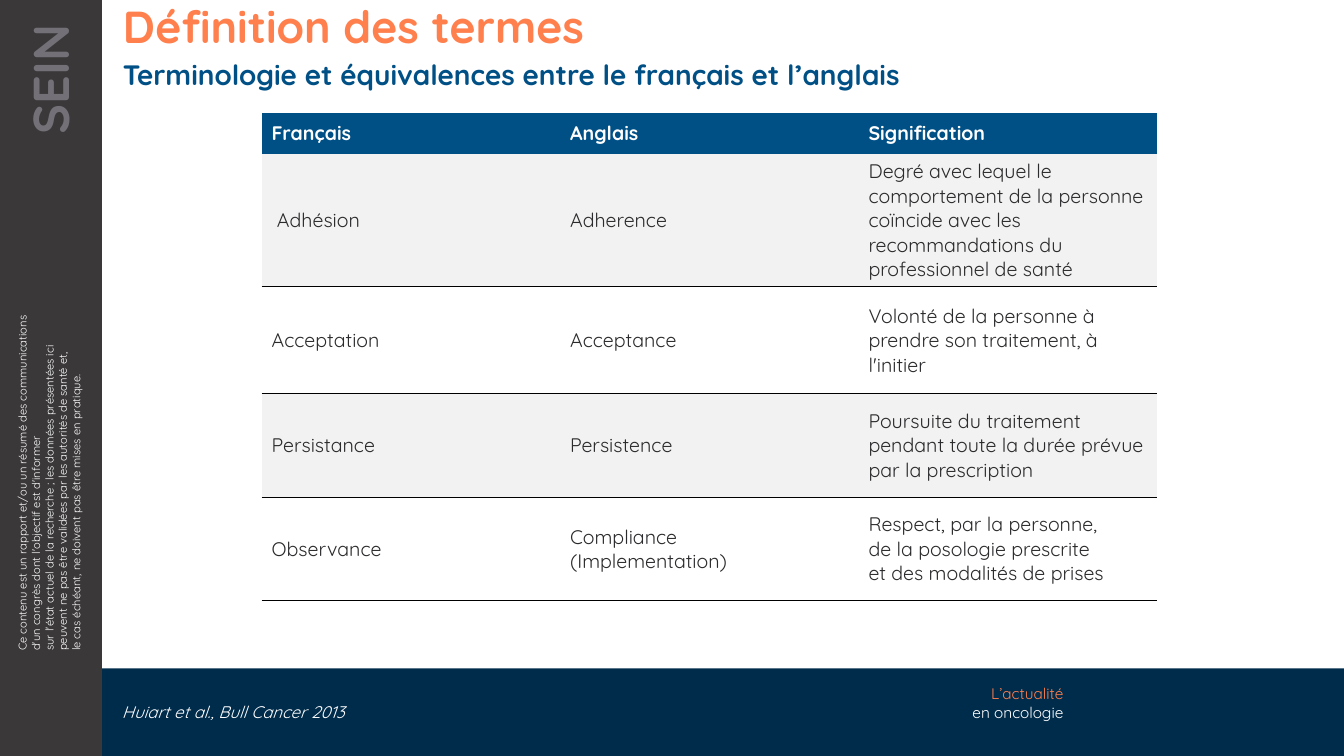
from dataclasses import dataclass

from lxml.etree import SubElement
from pptx import Presentation
from pptx.dml.color import RGBColor
from pptx.enum.shapes import MSO_SHAPE
from pptx.enum.text import MSO_ANCHOR, MSO_AUTO_SIZE, PP_ALIGN
from pptx.oxml.ns import qn
from pptx.util import Pt

# ---- Content
TITLE = "Définition des termes"
SUBTITLE = "Terminologie et équivalences entre le français et l’anglais"
CITATION = "Huiart et al., Bull Cancer 2013"
TOPIC = "SEIN"
DISCLAIMER = (
    "Ce contenu est un rapport et/ou un résumé des communications "
    "d'un congrès dont l'objectif est d'informer ",
    "sur l'état actuel de la recherche ; les données présentées ici peuvent "
    "ne pas être validées par les autorités de santé et, ",
    "le cas échéant, ne doivent pas être mises en pratique.",
)
TAGLINE = ("L’actualité", "en oncologie")
HEADINGS = ("Français", "Anglais", "Signification")
# Each cell is a tuple of paragraphs
TERMS = [
    ((" Adhésion",), ("Adherence",),
     ("Degré avec lequel le comportement de la personne coïncide avec les "
      "recommandations du professionnel de santé",)),
    (("Acceptation",), ("Acceptance",),
     ("Volonté de la personne à prendre son traitement, à l'initier",)),
    (("Persistance",), ("Persistence",),
     ("Poursuite du traitement pendant toute la durée prévue par la "
      "prescription",)),
    (("Observance",), ("Compliance", "(Implementation)"),
     ("Respect, par la personne,", "de la posologie prescrite",
      "et des modalités de prises")),
]


@dataclass(frozen=True)
class Theme:
    font: str = "Quicksand"
    orange: str = "FF7F4D"
    blue: str = "005086"
    navy: str = "002C4C"
    charcoal: str = "3A3839"
    grey: str = "737078"
    ink: str = "2B2A2C"
    band: str = "F2F2F2"
    white: str = "FFFFFF"
    rule: str = "000000"
    title_size: float = 32
    subtitle_size: float = 20
    topic_size: float = 36
    table_size: float = 14
    citation_size: float = 12
    tagline_size: float = 11
    disclaimer_size: float = 8


THEME = Theme()

# ---- Geometry, in points
SLIDE_W, SLIDE_H = 960, 540
SIDEBAR_W = 72.7
FOOTER_TOP = 477.4
TABLE_LEFT, TABLE_TOP, COLUMN_W = 186.8, 80.7, 213.2
ROW_HEIGHTS = (29.2, 95, 76.3, 74.2, 73.4)


def place(shape, left, top, width, height):
    shape.left, shape.top = Pt(left), Pt(top)
    shape.width, shape.height = Pt(width), Pt(height)


def write(paragraph, lines, size, bold=False, italic=False, align=PP_ALIGN.LEFT):
    """Fill a paragraph with (text, colour) lines separated by line breaks."""
    paragraph.alignment = align
    for number, (text, colour) in enumerate(lines):
        if number:
            paragraph.add_line_break()
        run = paragraph.add_run()
        run.text = text
        font = run.font
        font.name, font.size = THEME.font, Pt(size)
        font.bold, font.italic = bold, italic
        font.color.rgb = RGBColor.from_string(colour)


def add_bar(slide, left, top, width, height, colour):
    bar = slide.shapes.add_shape(
        MSO_SHAPE.RECTANGLE, Pt(left), Pt(top), Pt(width), Pt(height))
    bar.shadow.inherit = False
    bar.fill.solid()
    bar.fill.fore_color.rgb = RGBColor.from_string(colour)
    bar.line.fill.background()


def add_label(slide, box, lines, size, rotation=0, right_inset=7.2, **style):
    label = slide.shapes.add_textbox(*map(Pt, box))
    label.rotation = rotation
    frame = label.text_frame
    frame.word_wrap = True
    frame.margin_right = Pt(right_inset)
    write(frame.paragraphs[0], lines, size, **style)


def fill_placeholder(placeholder, box, left_inset, text, colour, size, **style):
    place(placeholder, *box)
    frame = placeholder.text_frame
    frame.auto_size = MSO_AUTO_SIZE.NONE
    frame.word_wrap = True
    frame.vertical_anchor = MSO_ANCHOR.MIDDLE
    frame.margin_left, frame.margin_right = Pt(left_inset), Pt(7.2)
    frame.margin_top = frame.margin_bottom = Pt(3.6)
    paragraph = frame.paragraphs[0]
    paragraph.line_spacing = 0.9
    paragraph.space_before = Pt(0)
    write(paragraph, [(text, colour)], size, **style)


def rule_below(cell):
    properties = cell._tc.get_or_add_tcPr()
    border = properties.makeelement(qn("a:lnB"), {"w": str(Pt(1))})
    properties.insert(0, border)
    fill = SubElement(border, qn("a:solidFill"))
    SubElement(fill, qn("a:srgbClr"), val=THEME.rule)


def add_terms_table(slide):
    rows = [tuple((heading,) for heading in HEADINGS)] + TERMS
    table = slide.shapes.add_table(
        len(rows), len(HEADINGS), Pt(TABLE_LEFT), Pt(TABLE_TOP),
        Pt(COLUMN_W * len(HEADINGS)), Pt(sum(ROW_HEIGHTS))).table
    # Plain table style without grid
    table._tbl.tblPr.find(qn("a:tableStyleId")).text = (
        "{2D5ABB26-0587-4C30-8999-92F81FD0307C}")
    for column in table.columns:
        column.width = Pt(COLUMN_W)
    for r, (row, height) in enumerate(zip(rows, ROW_HEIGHTS)):
        table.rows[r].height = Pt(height)
        header = r == 0
        band = THEME.blue if header else (THEME.band if r % 2 else THEME.white)
        colour = THEME.white if header else THEME.ink
        for c, paragraphs in enumerate(row):
            cell = table.cell(r, c)
            cell.vertical_anchor = MSO_ANCHOR.MIDDLE
            cell.fill.solid()
            cell.fill.fore_color.rgb = RGBColor.from_string(band)
            frame = cell.text_frame
            for p, text in enumerate(paragraphs):
                paragraph = frame.add_paragraph() if p else frame.paragraphs[0]
                write(paragraph, [(text, colour)], THEME.table_size, bold=header)
            if not header:
                rule_below(cell)


def main():
    deck = Presentation()
    deck.slide_width, deck.slide_height = Pt(SLIDE_W), Pt(SLIDE_H)
    comparison_layout = deck.slide_layouts[4]
    slide = deck.slides.add_slide(comparison_layout)
    slots = {slot.placeholder_format.idx: slot for slot in slide.placeholders}
    for unused in (2, 4):
        slots[unused].element.getparent().remove(slots[unused].element)

    # Footer and sidebar, behind the placeholders' text
    add_bar(slide, SIDEBAR_W, FOOTER_TOP, SLIDE_W - SIDEBAR_W,
            SLIDE_H - FOOTER_TOP, THEME.navy)
    add_bar(slide, 0, 0, SIDEBAR_W, SLIDE_H, THEME.charcoal)
    for slot in (slots[3], slots[0], slots[1]):
        slide.shapes._spTree.append(slot.element)

    # Sidebar and footer labels
    add_label(slide, (-94.3, 314.6, 259.2, 55.4),
              [(line, THEME.white) for line in DISCLAIMER],
              THEME.disclaimer_size, rotation=270)
    add_label(slide, (-74.9, 85, 221, 51.1), [(TOPIC, THEME.grey)],
              THEME.topic_size, rotation=270, right_inset=17.3,
              bold=True, align=PP_ALIGN.RIGHT)
    add_label(slide, (648.7, 485.3, 118.1, 33.8),
              list(zip(TAGLINE, (THEME.orange, THEME.white))),
              THEME.tagline_size, align=PP_ALIGN.RIGHT)

    # Title, subtitle and citation
    heading_w = SLIDE_W - 73.4
    fill_placeholder(slots[0], (73.4, 0, heading_w, 41), 14.4, TITLE,
                     THEME.orange, THEME.title_size, bold=True)
    fill_placeholder(slots[1], (73.4, 41, heading_w, 26.6), 14.4, SUBTITLE,
                     THEME.blue, THEME.subtitle_size, bold=True)
    fill_placeholder(slots[3], (79.9, 499.7, 406.1, 19.4), 7.2, CITATION,
                     THEME.white, THEME.citation_size, italic=True)

    # Glossary
    add_terms_table(slide)
    deck.save("out.pptx")


if __name__ == "__main__":
    main()
